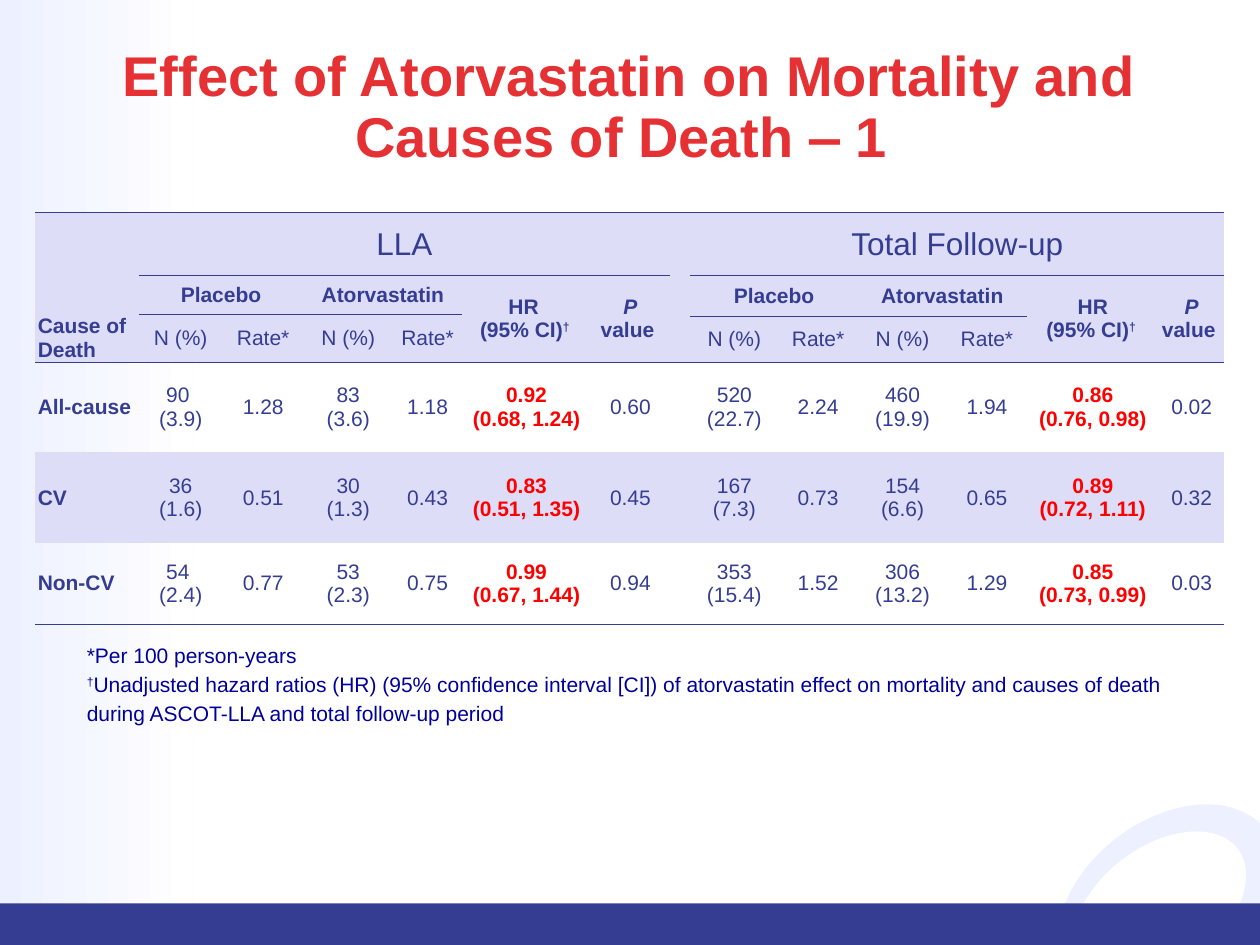
from dataclasses import dataclass

from lxml.etree import SubElement
from pptx import Presentation
from pptx.dml.color import RGBColor
from pptx.enum.shapes import MSO_SHAPE as Shape
from pptx.enum.text import MSO_ANCHOR as Anchor, MSO_AUTO_SIZE as AutoSize, PP_ALIGN as Align
from pptx.oxml.ns import qn
from pptx.util import Inches, Pt

RED = RGBColor(0xE5, 0x31, 0x34)
BRIGHT_RED = RGBColor(0xFF, 0x00, 0x00)
NAVY = RGBColor(0x35, 0x3D, 0x92)
NOTE_BLUE = RGBColor(0x00, 0x00, 0x99)
LAVENDER = RGBColor(0xDD, 0xDD, 0xF7)
PALE = RGBColor(0xED, 0xF0, 0xFF)
WHITE = RGBColor(0xFF, 0xFF, 0xFF)

WIDTH, HEIGHT = Inches(10), Inches(7.5)
COLUMNS = (0.82, 0.67, 0.64, 0.71, 0.55, 1.02, 0.63, 0.16, 0.7, 0.63, 0.71, 0.63, 1.05, 0.52)
ROWS = (0.5, 0.31, 0.01, 0.36, 0.72, 0.72, 0.64)
HEADER_ROWS = 4
GAP_COLUMN = 7


@dataclass(frozen=True)
class Span:
    text: str
    raised: bool = False
    italic: bool = False


@dataclass(frozen=True)
class Period:
    title: str
    column: int
    unit_row: int
    ratio: str


@dataclass(frozen=True)
class Outcome:
    cause: str
    results: tuple[tuple[str, ...], ...]


@dataclass(frozen=True)
class Area:
    left: float
    top: float
    width: float
    height: float

    def lengths(self) -> tuple[int, ...]:
        return (int(self.left * WIDTH), int(self.top * HEIGHT),
                int(self.width * WIDTH), int(self.height * HEIGHT))


PERIODS = (Period("LLA", 1, 2, "HR "), Period("Total Follow-up", 8, 3, "HR"))
OUTCOMES = (
    Outcome("All-cause", (
        ("90 |(3.9)", "1.28", "83|(3.6)", "1.18", "0.92|(0.68, 1.24)", "0.60"),
        ("520|(22.7)", "2.24", "460|(19.9)", "1.94", "0.86|(0.76, 0.98)", "0.02"))),
    Outcome("CV", (
        ("36|(1.6)", "0.51", "30|(1.3)", "0.43", "0.83|(0.51, 1.35)", "0.45"),
        ("167|(7.3)", "0.73", "154|(6.6)", "0.65", "0.89|(0.72, 1.11)", "0.32"))),
    Outcome("Non-CV", (
        ("54 |(2.4)", "0.77", "53|(2.3)", "0.75", "0.99|(0.67, 1.44)", "0.94"),
        ("353|(15.4)", "1.52", "306|(13.2)", "1.29", "0.85|(0.73, 0.99)", "0.03"))),
)


def write(frame, lines, size=12, color=NAVY, bold=False, align=Align.CENTER, spacing=None) -> None:
    for index, line in enumerate(lines):
        para = frame.paragraphs[0] if index == 0 else frame.add_paragraph()
        para.alignment = align
        if spacing:
            para.line_spacing = spacing
        for span in [Span(line)] if isinstance(line, str) else line:
            run = para.add_run()
            run.text = span.text
            font = run.font
            font.name, font.size, font.bold = "Arial", Pt(size), bold
            font.italic = span.italic
            font.color.rgb = color
            if span.raised:
                font._element.set("baseline", "30000")


def set_margins(holder, side: float) -> None:
    holder.margin_left = holder.margin_right = Inches(side)
    holder.margin_top = holder.margin_bottom = 0


def set_borders(cell, top: bool, bottom: bool) -> None:
    properties = cell._tc.get_or_add_tcPr()
    for tag, visible in (("lnL", False), ("lnR", False), ("lnT", top), ("lnB", bottom)):
        line = SubElement(properties, qn(f"a:{tag}"), w=str(Pt(0.25)))
        if visible:
            solid = SubElement(line, qn("a:solidFill"))
            SubElement(solid, qn("a:srgbClr"), val=str(NAVY))
        else:
            SubElement(line, qn("a:noFill"))


def put(table, row: int, column: int, lines=(), rows=1, columns=1,
        top=True, bottom=True, tinted=True, **style) -> None:
    last_row, last_column = row + rows - 1, column + columns - 1
    for r in range(row, last_row + 1):
        for c in range(column, last_column + 1):
            part = table.cell(r, c)
            set_margins(part, 0.02)
            set_borders(part, top and r == row, bottom and r == last_row)
            if tinted:
                part.fill.solid()
                part.fill.fore_color.rgb = LAVENDER
            else:
                part.fill.background()
    cell = table.cell(row, column)
    if rows * columns > 1:
        cell.merge(table.cell(last_row, last_column))
    cell.vertical_anchor = Anchor.MIDDLE
    write(cell.text_frame, lines, **style)


def add_header(table) -> None:
    put(table, 0, 0, bottom=False)
    put(table, 1, 0, top=False, bottom=False)
    put(table, 2, 0, ("Cause of", "Death"), rows=2, top=False, bold=True, align=Align.LEFT)
    put(table, 0, GAP_COLUMN, bottom=False)
    put(table, 1, GAP_COLUMN, rows=3, top=False)
    for period in PERIODS:
        first, unit_row = period.column, period.unit_row
        put(table, 0, first, (period.title,), columns=6, size=18)
        for offset, arm in ((0, "Placebo"), (2, "Atorvastatin")):
            put(table, 1, first + offset, (arm,), rows=unit_row - 1, columns=2, bold=True)
            for step, unit in enumerate(("N (%)", "Rate*")):
                put(table, unit_row, first + offset + step, (unit,), rows=HEADER_ROWS - unit_row)
        interval = (Span("(95% CI)"), Span("† ", raised=True))
        put(table, 1, first + 4, (period.ratio, interval), rows=3, bold=True)
        put(table, 1, first + 5, ((Span("P", italic=True),), "value "), rows=3, bold=True)


def add_outcomes(table) -> None:
    for index, outcome in enumerate(OUTCOMES):
        row = HEADER_ROWS + index
        look = dict(top=index == 0, bottom=index == len(OUTCOMES) - 1, tinted=index % 2 == 1)
        put(table, row, 0, (outcome.cause,), bold=True, align=Align.LEFT, **look)
        put(table, row, GAP_COLUMN, **look)
        for period, values in zip(PERIODS, outcome.results):
            for offset, value in enumerate(values):
                is_ratio = offset == 4
                put(table, row, period.column + offset, value.split("|"), bold=is_ratio,
                    color=BRIGHT_RED if is_ratio else NAVY, **look)


def add_block(slide, kind, area: Area, color: RGBColor, rotation=0.0, fade_to=None) -> None:
    block = slide.shapes.add_shape(kind, *area.lengths())
    block.shadow.inherit = False
    block.rotation = rotation
    block.line.fill.background()
    if fade_to is None:
        block.fill.solid()
        block.fill.fore_color.rgb = color
    else:
        block.fill.gradient()
        block.fill.gradient_angle = 0
        for stop, shade in zip(block.fill.gradient_stops, (color, fade_to)):
            stop.color.rgb = shade


def main() -> None:
    deck = Presentation()
    deck.slide_width, deck.slide_height = WIDTH, HEIGHT
    slide = deck.slides.add_slide(deck.slide_layouts[5])

    add_block(slide, Shape.OVAL, Area(0.83, 0.868, 0.194, 0.176), PALE, rotation=323.2)
    add_block(slide, Shape.OVAL, Area(0.843, 0.896, 0.155, 0.129), WHITE, rotation=323.2)
    add_block(slide, Shape.RECTANGLE, Area(0, 0, 0.153, 0.963), PALE, fade_to=WHITE)
    add_block(slide, Shape.RECTANGLE, Area(0, 0.956, 1, 0.044), NAVY)

    title = slide.shapes.title
    slide.shapes._spTree.append(title._element)
    title.left, title.top, title.width, title.height = Area(0.084, 0.051, 0.831, 0.061).lengths()
    frame = title.text_frame
    frame.word_wrap, frame.auto_size, frame.vertical_anchor = True, AutoSize.NONE, Anchor.TOP
    set_margins(frame, 0)
    write(frame, ("Effect of Atorvastatin on Mortality and Causes of Death ‒ 1 ",),
          size=32, color=RED, bold=True, spacing=0.9)

    area = Area(0.028, 0.225, sum(COLUMNS) / 10, sum(ROWS) / 7.5)
    table = slide.shapes.add_table(len(ROWS), len(COLUMNS), *area.lengths()).table
    table.first_row = table.horz_banding = False
    for column, width in zip(table.columns, COLUMNS):
        column.width = Inches(width)
    for row, height in zip(table.rows, ROWS):
        row.height = Inches(height)
    add_header(table)
    add_outcomes(table)

    notes = slide.shapes.add_textbox(*Area(0.059, 0.67, 0.898, 0.11).lengths()).text_frame
    notes.word_wrap = True
    write(notes, (
        "*Per 100 person-years",
        (Span("†", raised=True),
         Span("Unadjusted hazard ratios (HR) (95% confidence interval [CI]) of atorvastatin effect "
              "on mortality and causes of death during ASCOT-LLA and total follow-up period")),
    ), color=NOTE_BLUE, align=Align.LEFT, spacing=1.14)

    deck.save("out.pptx")


if __name__ == "__main__":
    main()
